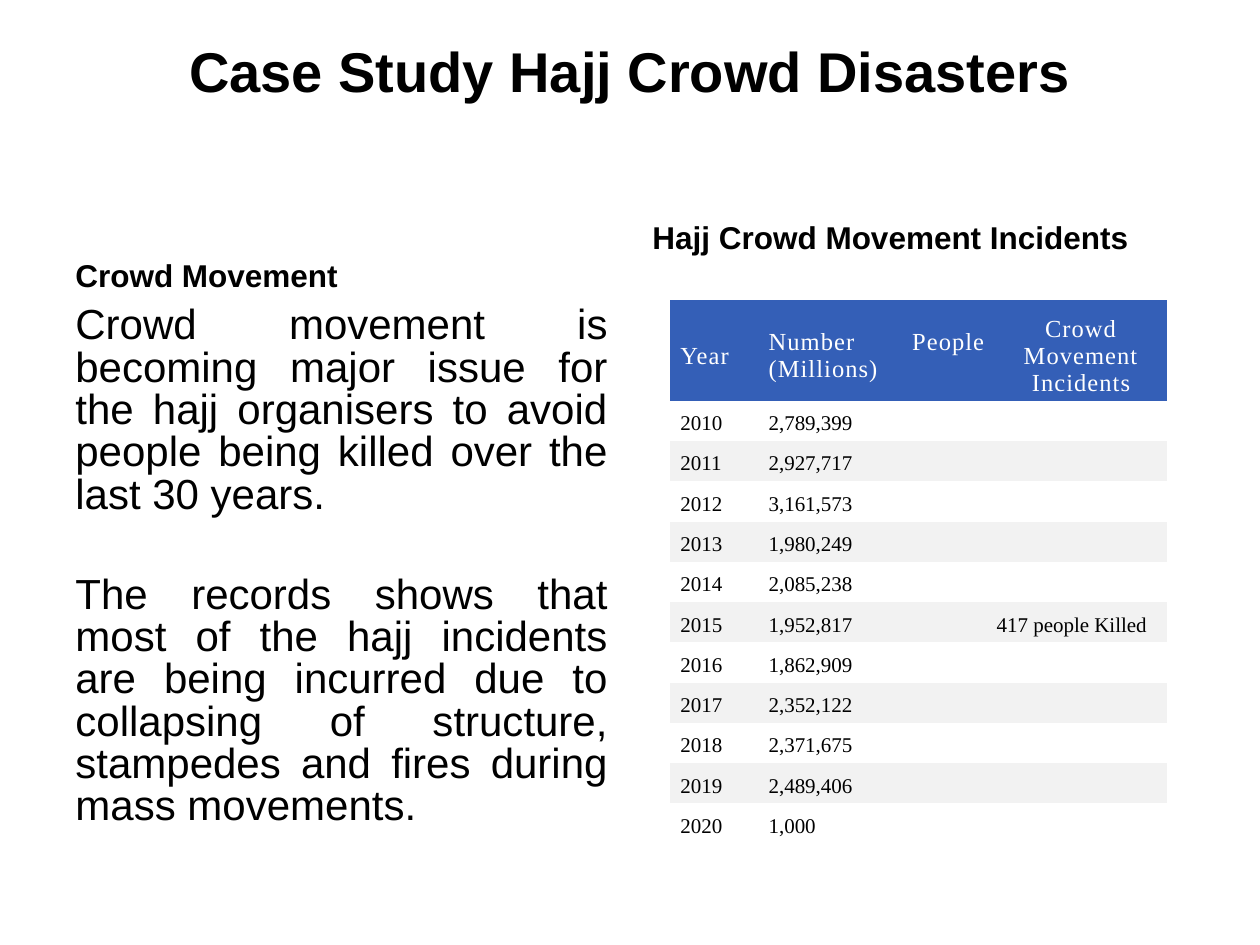
from dataclasses import dataclass, field

from pptx import Presentation
from pptx.dml.color import RGBColor
from pptx.enum.text import MSO_ANCHOR, PP_ALIGN
from pptx.oxml.ns import qn
from pptx.util import Pt

TOP, MIDDLE, BOTTOM = MSO_ANCHOR.TOP, MSO_ANCHOR.MIDDLE, MSO_ANCHOR.BOTTOM
LEFT, CENTER, JUSTIFY = PP_ALIGN.LEFT, PP_ALIGN.CENTER, PP_ALIGN.JUSTIFY

PX = 9144
NO_TABLE_STYLE = "{2D5ABB26-0587-4C30-8999-92F81FD0307C}"
BLACK, WHITE, BLUE, GREY = "000000", "FFFFFF", "345FB7", "F2F2F2"


def px(length: int) -> int:
    return length * PX


def colour(value: str) -> RGBColor:
    return RGBColor.from_string(value)


def apply(target, values: dict) -> None:
    for name, value in values.items():
        setattr(target, name, value)


@dataclass(frozen=True)
class TextStyle:
    size: int
    font: str = "Arial"
    color: str = BLACK
    bold: bool = False
    tracking: int = 0


@dataclass(frozen=True)
class TextBlock:
    box: tuple[int, int, int, int]
    paragraphs: tuple[str, ...]
    style: TextStyle
    anchor: MSO_ANCHOR = TOP
    bottom_inset: int = 5
    layout: dict = field(default_factory=dict)
    paragraph_gap: float = 0


def write(paragraph, text: str, style: TextStyle, layout: dict) -> None:
    apply(paragraph, layout)
    if not text:
        paragraph._p.get_or_add_endParaRPr().set("sz", str(style.size * 100))
        return
    run = paragraph.add_run()
    run.text = text
    apply(run.font, {"size": Pt(style.size), "name": style.font, "bold": style.bold})
    run.font.color.rgb = colour(style.color)
    if style.tracking:
        run.font._element.set("spc", str(style.tracking))


def fill_block(shape, block: TextBlock) -> None:
    apply(shape, dict(zip(("left", "top", "width", "height"), map(px, block.box))))
    frame = shape.text_frame
    apply(frame, {
        "word_wrap": True,
        "vertical_anchor": block.anchor,
        "margin_left": px(10),
        "margin_right": px(10),
        "margin_top": px(5),
        "margin_bottom": px(block.bottom_inset),
    })
    for index, text in enumerate(block.paragraphs):
        paragraph = frame.add_paragraph() if index else frame.paragraphs[0]
        write(paragraph, text, block.style, block.layout)
        if index and block.paragraph_gap:
            paragraph.space_before = Pt(block.paragraph_gap)


def fill_cell(cell, text: str, style: TextStyle, background: str | None,
              alignment: PP_ALIGN, anchor: MSO_ANCHOR, side_inset: int) -> None:
    apply(cell, {
        "margin_left": px(side_inset),
        "margin_right": px(side_inset),
        "margin_top": px(9),
        "margin_bottom": 0,
        "vertical_anchor": anchor,
    })
    if background:
        cell.fill.solid()
        cell.fill.fore_color.rgb = colour(background)
    else:
        cell.fill.background()
    write(cell.text_frame.paragraphs[0], text, style,
          {"alignment": alignment, "space_after": Pt(8)})


HEADING = TextStyle(18, bold=True)
TITLE = TextBlock((50, 30, 900, 125), ("Case Study Hajj Crowd Disasters",),
                  TextStyle(32, bold=True),
                  layout={"alignment": CENTER, "line_spacing": 0.9})
BLOCKS = (
    TextBlock((50, 168, 442, 70), ("Crowd Movement",), HEADING, BOTTOM,
              layout={"alignment": LEFT, "space_before": Pt(3.6)}),
    TextBlock(
        (50, 238, 442, 432),
        ("Crowd movement is becoming major issue for the hajj organisers "
         "to avoid people being killed over the last 30 years.",
         "The records shows that most of the hajj incidents are being incurred "
         "due to collapsing of structure, stampedes and fires during mass movements."),
        TextStyle(24),
        layout={"alignment": JUSTIFY, "line_spacing": 0.84, "space_before": Pt(4.8)},
        paragraph_gap=33),
    TextBlock((508, 168, 442, 70), ("Hajj Crowd Movement Incidents",), HEADING, BOTTOM,
              bottom_inset=35, layout={"alignment": LEFT, "space_before": Pt(3.6)}),
)

HEADER_STYLE = TextStyle(14, "Times New Roman", WHITE, tracking=60)
RECORD_STYLE = TextStyle(12, "Times New Roman")
COLUMN_WIDTHS = (70, 188, 136)
SIDE_INSETS = (8, 8, 1)
HEADER_HEIGHT, RECORD_HEIGHT = 80, 32
HEADERS = ("Year", "Number People (Millions)", "Crowd Movement Incidents")
FIRST_YEAR = 2010
PILGRIMS = ("2,789,399", "2,927,717", "3,161,573", "1,980,249", "2,085,238", "1,952,817",
            "1,862,909", "2,352,122", "2,371,675", "2,489,406", "1,000")
INCIDENTS = {2015: "417 people Killed"}


def draw_incident_table(slide, left: int, top: int) -> None:
    height = HEADER_HEIGHT + RECORD_HEIGHT * len(PILGRIMS)
    table = slide.shapes.add_table(
        len(PILGRIMS) + 1, len(HEADERS),
        px(left), px(top), px(sum(COLUMN_WIDTHS)), px(height)).table
    apply(table, {"first_row": False, "horz_banding": False})
    table._tbl.tblPr.find(qn("a:tableStyleId")).text = NO_TABLE_STYLE
    for column, width in zip(table.columns, COLUMN_WIDTHS):
        column.width = px(width)
    for index, row in enumerate(table.rows):
        row.height = px(RECORD_HEIGHT if index else HEADER_HEIGHT)

    for column, (header, inset) in enumerate(zip(HEADERS, SIDE_INSETS)):
        alignment = CENTER if column == 2 else JUSTIFY
        fill_cell(table.cell(0, column), header, HEADER_STYLE, BLUE,
                  alignment, MIDDLE, inset)
    for index, pilgrims in enumerate(PILGRIMS):
        year = FIRST_YEAR + index
        record = (str(year), pilgrims, INCIDENTS.get(year, ""))
        background = GREY if index % 2 else None
        for column, (value, inset) in enumerate(zip(record, SIDE_INSETS)):
            fill_cell(table.cell(index + 1, column), value, RECORD_STYLE, background,
                      JUSTIFY, TOP, inset)


def main() -> None:
    presentation = Presentation()
    apply(presentation, {"slide_width": px(1000), "slide_height": px(750)})
    slide = presentation.slides.add_slide(presentation.slide_layouts[5])
    fill_block(slide.shapes.title, TITLE)
    for block in BLOCKS:
        fill_block(slide.shapes.add_textbox(*map(px, block.box)), block)
    draw_incident_table(slide, 532, 238)
    presentation.save("out.pptx")


if __name__ == "__main__":
    main()
